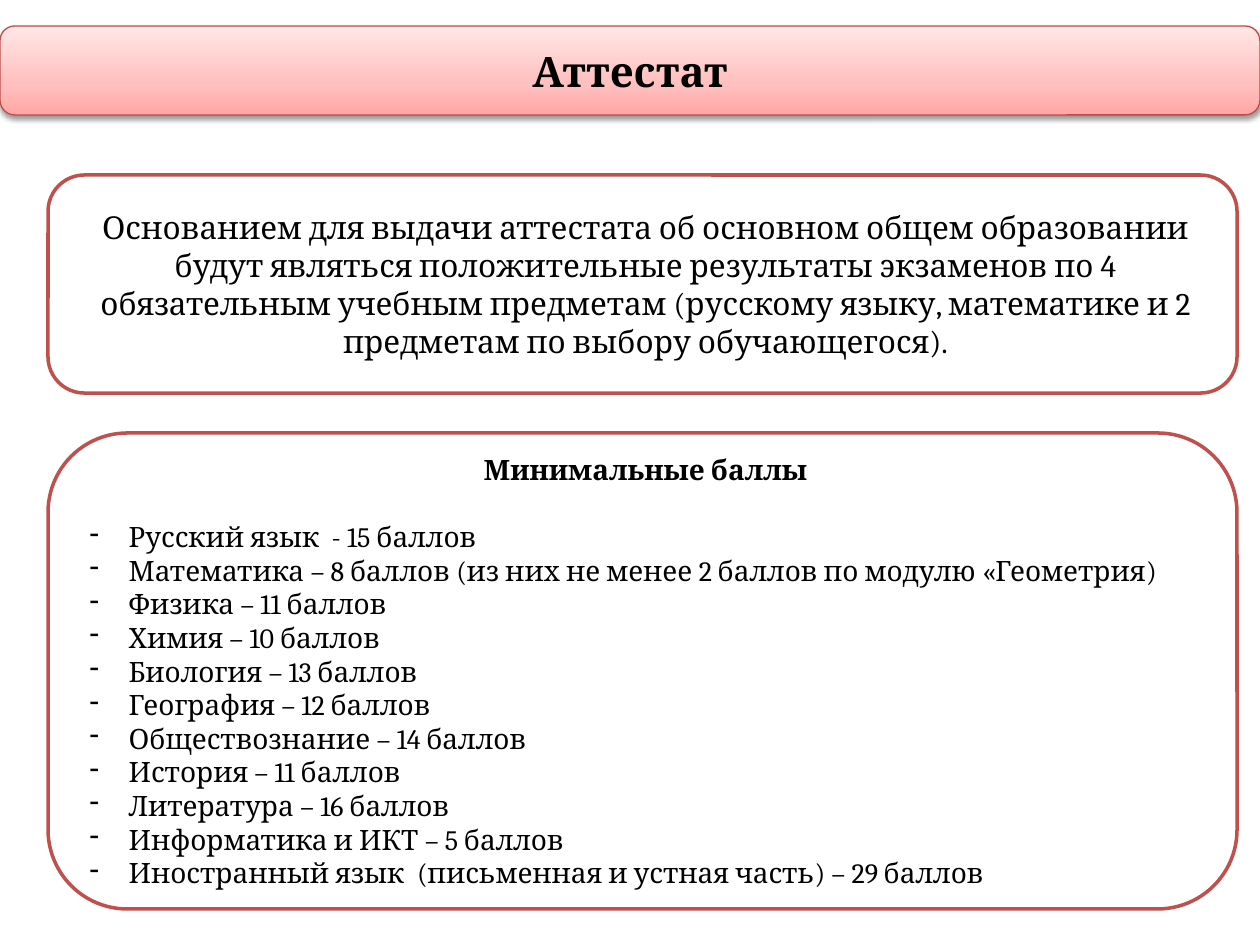
from dataclasses import dataclass

from lxml import etree
from pptx import Presentation
from pptx.dml.color import RGBColor
from pptx.enum.shapes import MSO_SHAPE
from pptx.enum.text import MSO_ANCHOR, PP_ALIGN
from pptx.oxml.ns import qn
from pptx.shapes.autoshape import Shape
from pptx.slide import Slide
from pptx.text.text import TextFrame
from pptx.util import Pt

ROUNDED = MSO_SHAPE.ROUNDED_RECTANGLE
MIDDLE = MSO_ANCHOR.MIDDLE
CENTER, LEFT = PP_ALIGN.CENTER, PP_ALIGN.LEFT
EMU_PER_PX = 914400 / 126
FONT = "Cambria"
BLACK, WHITE, RED = "000000", "FFFFFF", "C0504D"
BANNER_LINE = "BF4C48"
BANNER_STOPS = [(0, "FFA6A5"), (35, "FFC0BF"), (100, "FFE7E7")]
BODY_INDENT = 6
BULLET_MARGIN, BULLET_HANG = 45, 39


@dataclass
class Panel:
    left: int
    top: int
    width: int
    height: int
    line_color: str = RED
    line_points: float = 2


@dataclass
class Line:
    text: str
    size: int
    bold: bool = False
    margin: int = 0
    space_after: float = 0
    bullet: bool = False


BANNER = Panel(0, 26, 1260, 89, BANNER_LINE, 0.75)
BASIS_PANEL = Panel(48, 175, 1189, 218)
SCORES_PANEL = Panel(48, 433, 1189, 476)

BASIS = (
    "Основанием для выдачи аттестата об основном общем образовании будут являться "
    "положительные результаты экзаменов по 4 обязательным учебным предметам "
    "(русскому языку, математике и 2 предметам по выбору обучающегося)."
)
SCORES = [
    "Русский язык  - 15 баллов",
    "Математика – 8 баллов (из них не менее 2 баллов по модулю «Геометрия)",
    "Физика – 11 баллов",
    "Химия – 10 баллов",
    "Биология – 13 баллов",
    "География – 12 баллов",
    "Обществознание – 14 баллов",
    "История – 11 баллов",
    "Литература – 16 баллов",
    "Информатика и ИКТ – 5 баллов",
    "Иностранный язык  (письменная и устная часть) – 29 баллов",
]


def px(length: int) -> int:
    return round(length * EMU_PER_PX)


def color(value: str) -> RGBColor:
    return RGBColor.from_string(value)


def write_lines(frame: TextFrame, lines: list[Line]) -> None:
    frame.word_wrap = True
    frame.vertical_anchor = MIDDLE
    for index, line in enumerate(lines):
        para = frame.paragraphs[0] if index == 0 else frame.add_paragraph()
        para.alignment = LEFT if line.bullet else CENTER
        para.space_after = Pt(line.space_after)
        properties = para._p.get_or_add_pPr()
        properties.set("marL", str(px(line.margin)))
        if line.bullet:
            properties.set("indent", str(-px(BULLET_HANG)))
            etree.SubElement(properties, qn("a:buChar"), char="-")
        span = para.add_run()
        span.text = line.text
        span.font.name = FONT
        span.font.size = Pt(line.size)
        span.font.bold = line.bold
        span.font.color.rgb = color(BLACK)


def add_panel(page: Slide, panel: Panel, lines: list[Line]) -> Shape:
    box = page.shapes.add_shape(
        ROUNDED, px(panel.left), px(panel.top), px(panel.width), px(panel.height)
    )
    box.shadow.inherit = False
    box.fill.solid()
    box.fill.fore_color.rgb = color(WHITE)
    box.line.color.rgb = color(panel.line_color)
    box.line.width = Pt(panel.line_points)
    write_lines(box.text_frame, lines)
    return box


def shade_upward(box: Shape, stops: list[tuple[int, str]]) -> None:
    box.fill.gradient()
    box.fill.gradient_angle = 90
    stop_list = box._element.spPr.find(".//" + qn("a:gsLst"))
    for old_stop in list(stop_list):
        stop_list.remove(old_stop)
    for percent, value in stops:
        stop = etree.SubElement(stop_list, qn("a:gs"), pos=str(percent * 1000))
        etree.SubElement(stop, qn("a:srgbClr"), val=value)


def drop_shadow(box: Shape) -> None:
    effects = box._element.spPr.find(qn("a:effectLst"))
    shadow = etree.SubElement(
        effects, qn("a:outerShdw"), blurRad=str(Pt(3.1)), dist=str(Pt(1.6)),
        dir="5400000", rotWithShape="0",
    )
    tint = etree.SubElement(shadow, qn("a:srgbClr"), val=BLACK)
    etree.SubElement(tint, qn("a:alpha"), val="38000")


def main() -> None:
    deck = Presentation()
    deck.slide_width, deck.slide_height = px(1260), px(945)
    page = deck.slides.add_slide(deck.slide_layouts[6])

    banner = add_panel(page, BANNER, [Line("Аттестат", 24, bold=True)])
    shade_upward(banner, BANNER_STOPS)
    drop_shadow(banner)

    heading = Line("Минимальные баллы", 16, True, BODY_INDENT, space_after=19.2)
    scores = [Line(text, 16, margin=BULLET_MARGIN, bullet=True) for text in SCORES]
    add_panel(page, SCORES_PANEL, [heading, *scores])
    add_panel(page, BASIS_PANEL, [Line(BASIS, 18, margin=BODY_INDENT)])

    deck.save("out.pptx")


if __name__ == "__main__":
    main()
